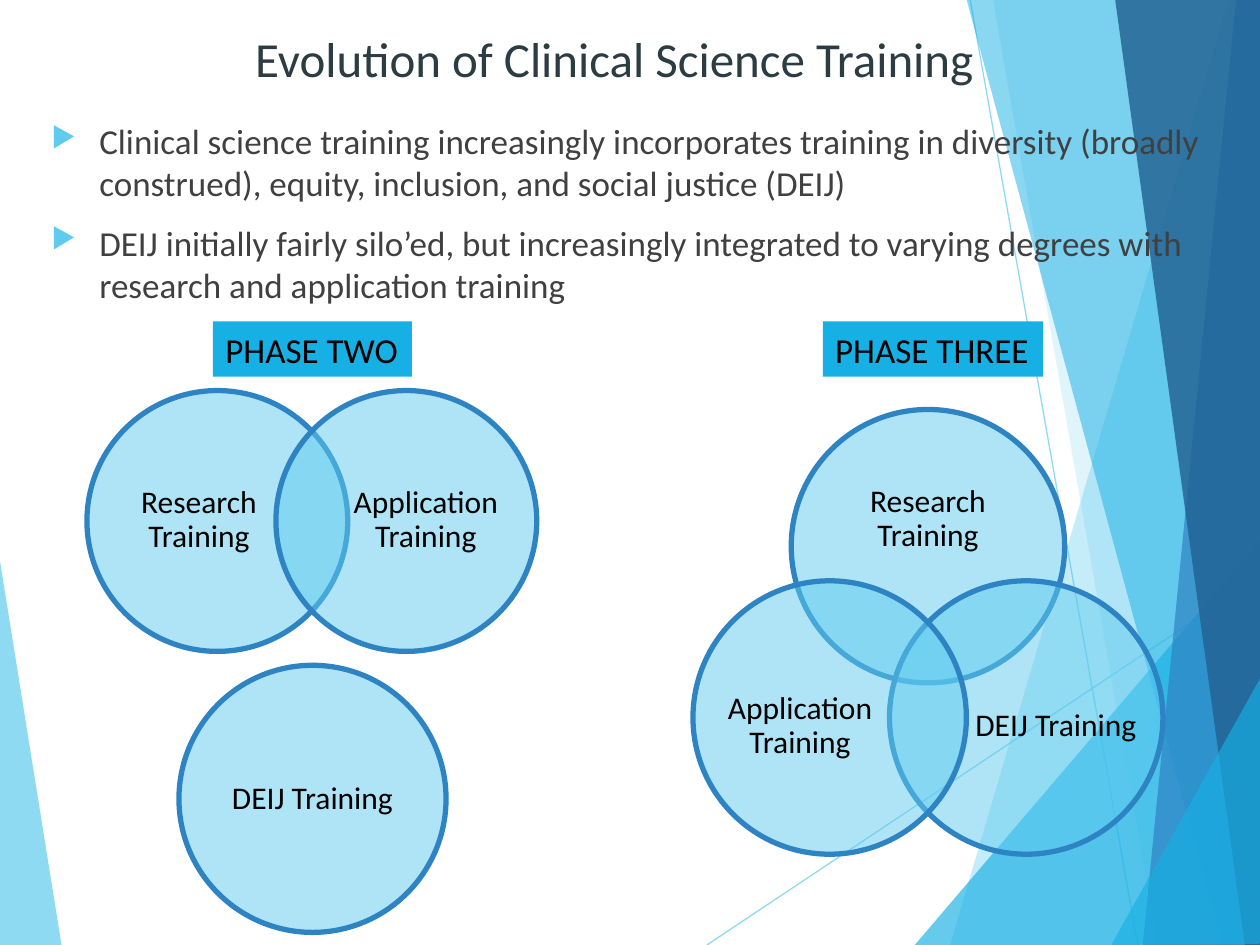
from typing import NamedTuple

from lxml import etree
from pptx import Presentation
from pptx.dml.color import RGBColor
from pptx.enum import shapes, text
from pptx.oxml import ns
from pptx.util import Inches, Pt

SKY = RGBColor(0x5F, 0xCB, 0xEF)
CYAN = RGBColor(0x17, 0xB0, 0xE4)
BLUE = RGBColor(0x2E, 0x83, 0xC3)
NAVY = RGBColor(0x22, 0x62, 0x92)
SLATE = RGBColor(0x2C, 0x3C, 0x43)
GRAY = RGBColor(0x40, 0x40, 0x40)
BLACK = RGBColor(0, 0, 0)
FONT = "Calibri"


class Facet(NamedTuple):
    color: RGBColor
    opacity: int
    points: list


class Ray(NamedTuple):
    start: tuple
    end: tuple


class Box(NamedTuple):
    left: float
    top: float
    width: float
    height: float


class Circle(NamedTuple):
    left: float
    top: float
    size: float
    label: str
    label_box: Box


class Phase(NamedTuple):
    name: str
    box: Box
    circles: list


# Background: the left wedge lies below the rays, the other facets above
LEFT_WEDGE = Facet(SKY, 70, [(-0.01, 4.39), (0.49, 7.51), (-0.01, 7.5)])
RAYS = [Ray((5.61, 7.5), (10.01, 4.57)), Ray((7.7, 0), (9.03, 7.5))]
RIGHT_FACETS = [
    Facet(SKY, 36, [(9.75, 0), (7.54, 7.5), (10.02, 7.51), (10.01, 0.01)]),
    Facet(SKY, 20, [(7.88, -0.01), (9.19, 7.5), (10.01, 7.5), (10.01, -0.01)]),
    Facet(CYAN, 66, [(7.26, 7.5), (10, 4.29), (10.01, 7.5)]),
    Facet(CYAN, 50, [(7.67, -0.01), (9.7, 7.5), (10.01, 7.49), (10.01, -0.01)]),
    Facet(BLUE, 70, [(9.81, -0.01), (9.07, 7.5), (10.01, 7.5), (10, -0.01)]),
    Facet(NAVY, 82, [(8.85, -0.01), (9.88, 7.5), (10.02, 7.5), (10, -0.01)]),
    Facet(CYAN, 66, [(8.82, 7.5), (10.02, 5.35), (10.02, 7.49)]),
]

BULLETS = [
    "Clinical science training increasingly incorporates training in diversity "
    "(broadly construed), equity, inclusion, and social justice (DEIJ)",
    "DEIJ initially fairly silo’ed, but increasingly integrated to varying "
    "degrees with research and application training",
]

RESEARCH, APPLICATION, DEIJ = "Research Training", "Application Training", "DEIJ Training"
PHASES = [
    Phase("PHASE TWO", Box(1.69, 2.55, 1.58, 0.44), [
        Circle(1.42, 5.28, 2.12, DEIJ, Box(1.73, 5.59, 1.5, 1.5)),
        Circle(0.69, 3.1, 2.07, RESEARCH, Box(0.98, 3.34, 1.2, 1.58)),
        Circle(2.19, 3.1, 2.07, APPLICATION, Box(2.78, 3.34, 1.2, 1.58)),
    ]),
    Phase("PHASE THREE", Box(6.53, 2.55, 1.75, 0.44), [
        Circle(6.28, 3.25, 2.17, RESEARCH, Box(6.57, 3.63, 1.59, 0.98)),
        Circle(7.06, 4.61, 2.17, DEIJ, Box(7.73, 5.17, 1.3, 1.19)),
        Circle(5.5, 4.61, 2.17, APPLICATION, Box(5.7, 5.17, 1.3, 1.19)),
    ]),
]


def inches(values) -> list:
    return [Inches(v) for v in values]


def set_opacity(shape, percent: int) -> None:
    """Make the first colour of the shape translucent."""
    color = next(shape.element.spPr.iter(ns.qn("a:srgbClr")))
    etree.SubElement(color, ns.qn("a:alpha"), val=str(percent * 1000))


def paint(shape, color: RGBColor, opacity: int = 100) -> None:
    shape.shadow.inherit = False
    shape.fill.solid()
    shape.fill.fore_color.rgb = color
    if opacity < 100:
        set_opacity(shape, opacity)
    shape.line.fill.background()


def write(p, words: str, size: int, color: RGBColor, align=text.PP_ALIGN.LEFT) -> None:
    p.text = words
    p.alignment = align
    p.font.name, p.font.size = FONT, Pt(size)
    p.font.color.rgb = color


def add_text_frame(s, box: Box):
    tf = s.shapes.add_textbox(*inches(box)).text_frame
    tf.word_wrap = True
    return tf


def add_facet(s, facet: Facet) -> None:
    start, *rest = [tuple(inches(point)) for point in facet.points]
    builder = s.shapes.build_freeform(*start)
    builder.add_line_segments(rest, close=True)
    paint(builder.convert_to_shape(), facet.color, facet.opacity)


def add_ray(s, ray: Ray) -> None:
    line = s.shapes.add_connector(shapes.MSO_CONNECTOR.STRAIGHT, *inches(ray.start + ray.end))
    line.line.color.rgb = SKY
    line.line.width = Pt(0.75)
    set_opacity(line, 70)
    etree.SubElement(line.element.spPr, ns.qn("a:effectLst"))


def add_bullet(p) -> None:
    pPr = p._p.get_or_add_pPr()
    pPr.set("marL", str(Inches(0.38)))
    pPr.set("indent", str(-Inches(0.38)))
    color = etree.Element(ns.qn("a:buClr"))
    etree.SubElement(color, ns.qn("a:srgbClr"), val=str(SKY))
    size = etree.Element(ns.qn("a:buSzPct"), val="80000")
    char = etree.Element(ns.qn("a:buChar"), char="▶")
    # Bullet settings belong between the spacing and the font defaults
    font = pPr.find(ns.qn("a:defRPr"))
    for part in (color, size, char):
        font.addprevious(part)


def add_circle(s, circle: Circle) -> None:
    bounds = inches((circle.left, circle.top, circle.size, circle.size))
    sp = s.shapes.add_shape(shapes.MSO_SHAPE.OVAL, *bounds)
    paint(sp, SKY, 50)
    sp.line.color.rgb = BLUE
    sp.line.width = Pt(3)

    tf = add_text_frame(s, circle.label_box)
    tf.margin_left = tf.margin_right = tf.margin_top = tf.margin_bottom = 0
    tf.vertical_anchor = text.MSO_ANCHOR.MIDDLE
    p = tf.paragraphs[0]
    write(p, circle.label, 18, BLACK, text.PP_ALIGN.CENTER)
    p.line_spacing = 0.9


def add_phase(s, phase: Phase) -> None:
    sp = s.shapes.add_shape(shapes.MSO_SHAPE.RECTANGLE, *inches(phase.box))
    paint(sp, CYAN)
    sp.text_frame.word_wrap = False
    write(sp.text_frame.paragraphs[0], phase.name, 20, BLACK)
    for circle in phase.circles:
        add_circle(s, circle)


def main() -> None:
    prs = Presentation()
    prs.slide_width, prs.slide_height = Inches(10), Inches(7.5)
    s = prs.slides.add_slide(prs.slide_layouts[6])

    # Background
    add_facet(s, LEFT_WEDGE)
    for ray in RAYS:
        add_ray(s, ray)
    for facet in RIGHT_FACETS:
        add_facet(s, facet)

    # Title
    tf = add_text_frame(s, Box(0.31, 0.18, 9.13, 0.73))
    write(tf.paragraphs[0], "Evolution of Clinical Science Training", 28, SLATE,
          text.PP_ALIGN.CENTER)

    # Bullets
    tf = add_text_frame(s, Box(0.31, 0.9, 9.37, 1.6))
    for i, words in enumerate(BULLETS):
        p = tf.add_paragraph() if i else tf.paragraphs[0]
        write(p, words, 20, GRAY)
        p.space_before = Pt(10)
        add_bullet(p)

    # Venn diagrams
    for phase in PHASES:
        add_phase(s, phase)

    prs.save("out.pptx")


if __name__ == "__main__":
    main()
